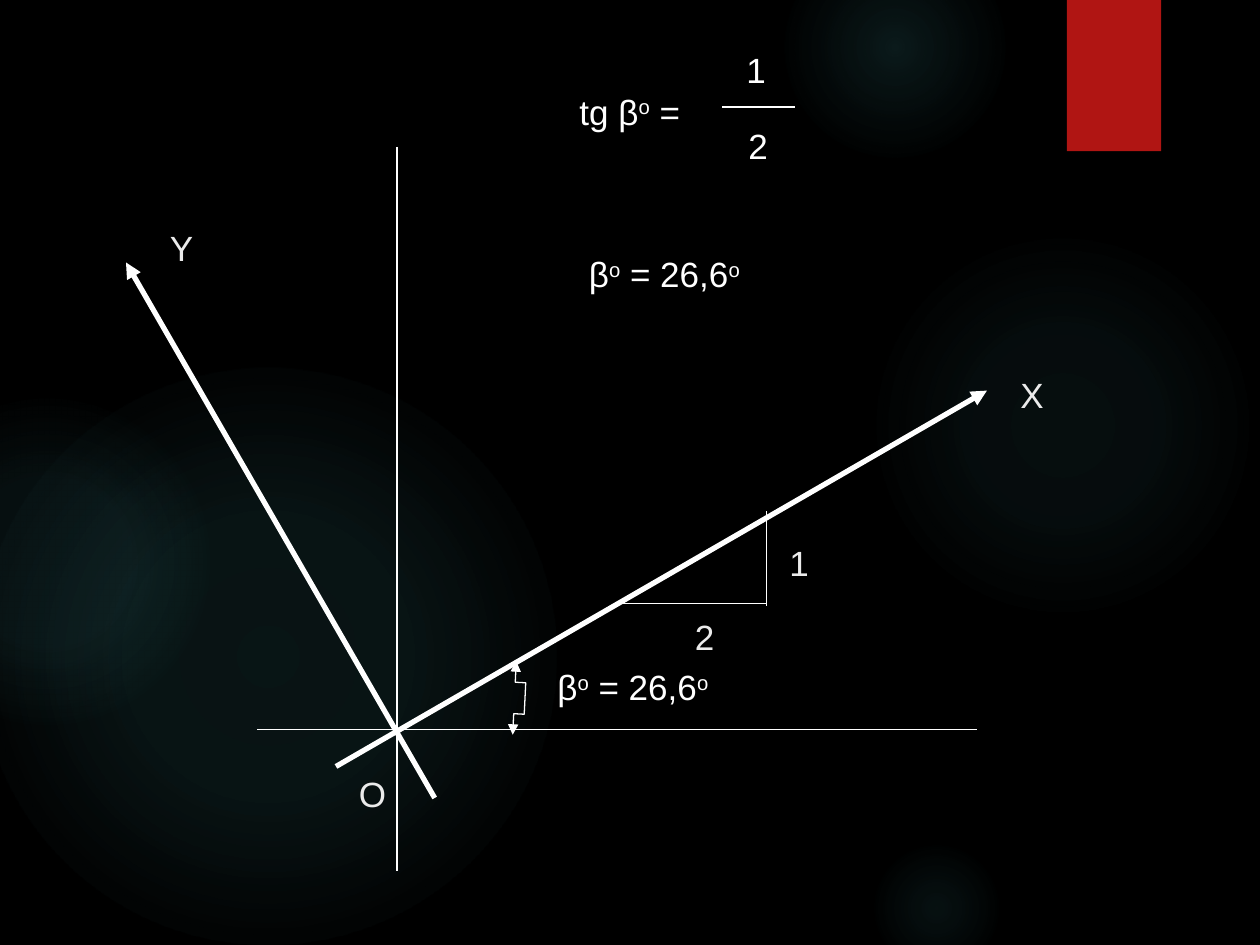
import pptx
import pptx.dml.color
import pptx.enum.shapes
import pptx.enum.text
import pptx.oxml
import pptx.oxml.ns
import pptx.util

COLS, ROWS = 120, 90
WHITE, PALE, GLOW, RED = "FFFFFF", "EBEBEB", "50B9C1", "B01513"
ANGLE = ["β", "o", " = 26,6", "o"]


def rgb(value):
    return pptx.dml.color.RGBColor.from_string(value)


def element(xml):
    """Parse a DrawingML fragment whose root tag has no namespace yet."""
    tag, rest = xml.split(" ", 1)
    return pptx.oxml.parse_xml(f"{tag} {pptx.oxml.ns.nsdecls('a')} {rest}")


def bezier(a, b, c, d, steps=12):
    """Points of a cubic curve, without its first point."""
    for i in range(1, steps + 1):
        t = i / steps
        u = 1 - t
        yield tuple(u**3 * p + 3 * u * u * t * q + 3 * u * t * t * r + t**3 * s
                    for p, q, r, s in zip(a, b, c, d))


class Diagram:
    """Draws on one slide; lengths are columns and rows of a 120 x 90 grid."""

    font, size = "Arial", 20

    def __init__(self, prs):
        self.cell = prs.slide_width / COLS
        self.s = prs.slides.add_slide(prs.slide_layouts[6])
        fill = self.s.background.fill
        fill.solid()
        fill.fore_color.rgb = rgb("000000")

    def grid(self, *values):
        return [round(v * self.cell) for v in values]

    def shape(self, kind, *box):
        sp = self.s.shapes.add_shape(kind, *self.grid(*box))
        sp.shadow.inherit = False
        sp.line.fill.background()
        return sp

    def glow(self, left, top, size, stops):
        """A circle fading outwards; stops are (position, opacity) in percent."""
        sp = self.shape(pptx.enum.shapes.MSO_SHAPE.OVAL, left, top, size, size)
        sp.fill.background()
        marks = "".join(
            f'<a:gs pos="{pos * 1000}"><a:srgbClr val="{GLOW}">'
            f'<a:alpha val="{alpha * 1000}"/></a:srgbClr></a:gs>'
            for pos, alpha in stops)
        grad = element(
            f'<a:gradFill rotWithShape="1"><a:gsLst>{marks}</a:gsLst><a:path path="circle">'
            '<a:fillToRect l="50000" t="50000" r="50000" b="50000"/></a:path></a:gradFill>')
        pr = sp._element.spPr
        pr.replace(pr.find(pptx.oxml.ns.qn("a:noFill")), grad)

    def block(self, color, *box):
        sp = self.shape(pptx.enum.shapes.MSO_SHAPE.RECTANGLE, *box)
        sp.fill.solid()
        sp.fill.fore_color.rgb = rgb(color)

    def stroke(self, sp, width, arrows):
        sp.line.color.rgb = rgb(WHITE)
        sp.line.width = pptx.util.Pt(width)
        for end in arrows:
            sp.line._get_or_add_ln().append(element(f'<a:{end} type="triangle"/>'))

    def line(self, x1, y1, x2, y2, width=0.75, arrows=()):
        sp = self.s.shapes.add_connector(
            pptx.enum.shapes.MSO_CONNECTOR.STRAIGHT, *self.grid(x1, y1, x2, y2))
        self.stroke(sp, width, arrows)
        sp._element.spPr.append(element("<a:effectLst />"))

    def curve(self, points, rotation):
        fb = self.s.shapes.build_freeform(*points[0], scale=self.cell)
        fb.add_line_segments(points[1:], close=False)
        sp = fb.convert_to_shape()
        sp.shadow.inherit = False
        sp.fill.background()
        sp.rotation = rotation
        self.stroke(sp, 0.75, ("headEnd", "tailEnd"))

    def text(self, parts, left, top, width=6, color=WHITE):
        """One line of text; each part that is just "o" is a raised degree sign."""
        tf = self.s.shapes.add_textbox(*self.grid(left, top, width, 5.2)).text_frame
        tf.word_wrap = True
        tf.auto_size = pptx.enum.text.MSO_AUTO_SIZE.SHAPE_TO_FIT_TEXT
        p = tf.paragraphs[0]
        p.alignment = pptx.enum.text.PP_ALIGN.JUSTIFY
        for part in parts:
            r = p.add_run()
            r.text = part
            r.font.name = self.font
            r.font.size = pptx.util.Pt(self.size)
            r.font.color.rgb = rgb(color)
            if part == "o":
                r.font._element.set("baseline", "30000")


def main():
    prs = pptx.Presentation()
    prs.slide_width, prs.slide_height = pptx.util.Inches(10), pptx.util.Inches(7.5)
    d = Diagram(prs)

    # Backdrop
    for left, top, size, inner, middle, edge in [
            (82.7, 22, 37, 7, 6, 69), (74.7, -6, 21, 14, 7, 73), (82.7, 80, 13, 9, 5, 66),
            (-2, 35, 55, 11, 10, 75), (-11, 38, 31, 8, 8, 72)]:
        d.glow(left, top, size, [(0, inner), (36, middle), (edge, 0)])
    d.block(RED, 101.6, 0, 9, 14.4)

    # Rotated axes, then the reference axes
    d.line(12, 25, 41.4, 76, 3, ["headEnd"])
    d.line(32, 73, 94, 37.2, 3, ["tailEnd"])
    d.line(37.8, 14, 37.8, 83)
    d.line(24.5, 69.5, 93, 69.5)

    # Slope triangle
    d.line(73, 48.7, 73, 57.7)
    d.line(73, 57.5, 59, 57.5)

    for label, left, top in [("X", 96, 35), ("Y", 15, 21), ("2", 65, 58),
                             ("1", 74, 51), ("O", 33, 73)]:
        d.text([label], left, top, color=PALE)

    # Tangent formula and its result
    d.text(["tg β", "o", " ="], 54, 8, 19)
    d.text(["1"], 69.9, 4, 8)
    d.text(["2"], 70.1, 11.3, 8)
    d.line(68.8, 10.2, 75.7, 10.2)
    d.text(ANGLE, 54.9, 23.5, 19)

    # Angle mark
    start, middle, end = (48.8, 63.4), (49.9, 66.5), (48.8, 69.5)
    d.curve([start,
             *bezier(start, (49.1, 63.8), (49.9, 65.4), middle),
             *bezier(middle, (49.9, 67.4), (49.1, 68.9), end)], 2.8)
    d.text(ANGLE, 51.9, 62.8, 19)

    prs.save("out.pptx")


if __name__ == "__main__":
    main()
